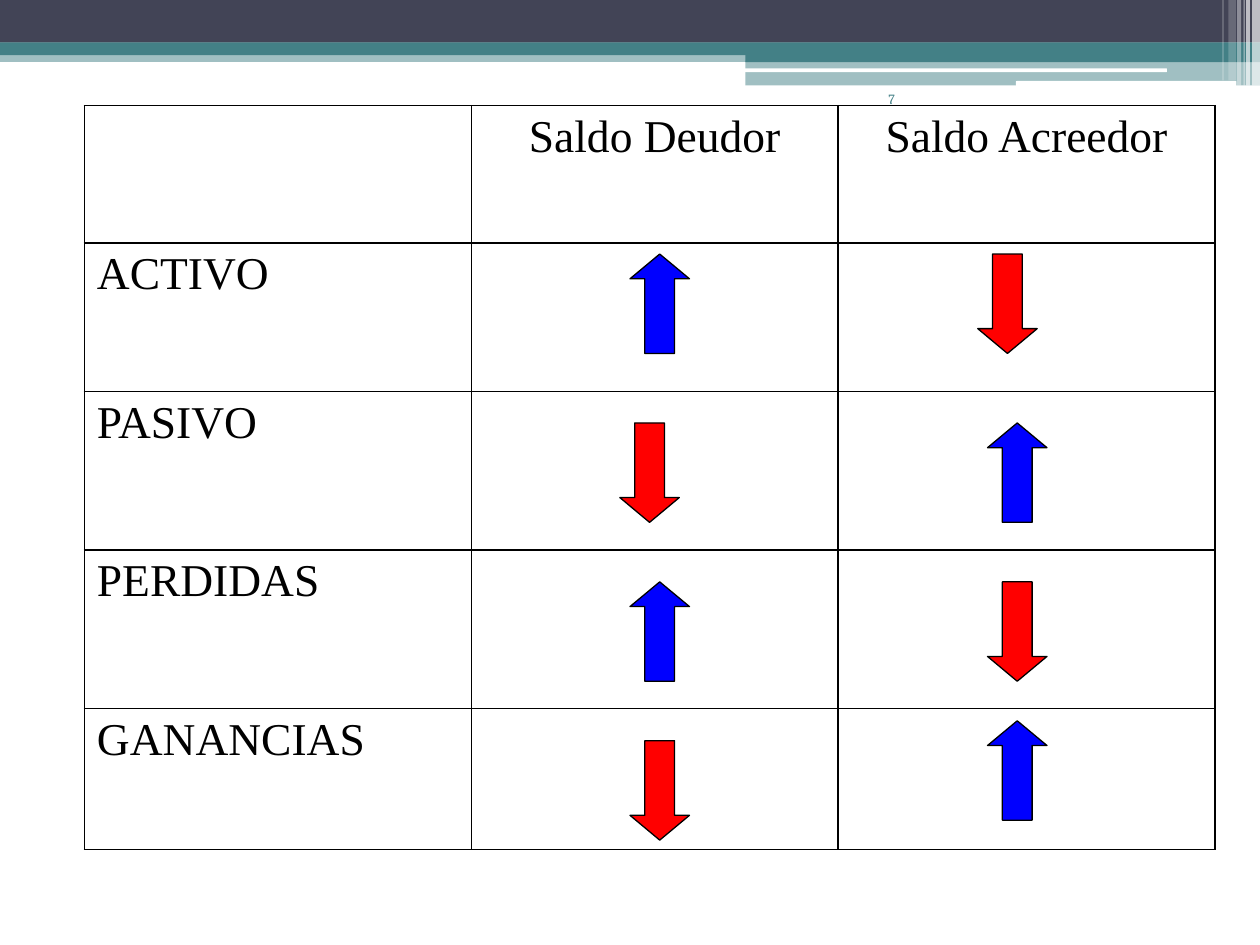
from lxml.etree import SubElement
from pptx import Presentation
from pptx.dml.color import RGBColor
from pptx.enum.shapes import MSO_SHAPE
from pptx.enum.text import PP_ALIGN
from pptx.oxml import parse_xml
from pptx.oxml.ns import nsdecls, qn
from pptx.util import Pt

BLACK = RGBColor(0x00, 0x00, 0x00)
WHITE = RGBColor(0xFF, 0xFF, 0xFF)
NAVY = RGBColor(0x42, 0x44, 0x56)
TEAL = RGBColor(0x43, 0x80, 0x86)
BLUE = RGBColor(0x00, 0x00, 0xFF)
RED = RGBColor(0xFF, 0x00, 0x00)


class SlideBuilder:
    """Draws styled elements on one slide, with lengths in points."""

    table_font = "Times New Roman"
    number_font = "Cambria"

    def __init__(self, slide):
        self.slide = slide

    def shape(self, preset, box, color):
        shape = self.slide.shapes.add_shape(preset, *map(Pt, box))
        shape.shadow.inherit = False
        shape.fill.solid()
        shape.fill.fore_color.rgb = color
        shape.line.fill.background()
        return shape

    def band(self, box, color, opacity=100, preset=MSO_SHAPE.RECTANGLE):
        band = self.shape(preset, box, color)
        if opacity < 100:
            tint = band.fill._xPr.find(qn("a:solidFill"))[0]
            SubElement(tint, qn("a:alpha"), val=str(opacity * 1000))

    def arrow(self, left, top, rises):
        preset = MSO_SHAPE.UP_ARROW if rises else MSO_SHAPE.DOWN_ARROW
        arrow = self.shape(preset, (left, top, 34, 56.8), BLUE if rises else RED)
        arrow.adjustments[1] = 0.417
        arrow.line.color.rgb = BLACK
        arrow.line.width = Pt(0.75)

    def add_text(self, frame, text, size, font, color, align):
        paragraph = frame.paragraphs[0]
        paragraph.alignment = align
        run = paragraph.add_run()
        run.text = text
        run.font.size = Pt(size)
        run.font.name = font
        run.font.color.rgb = color

    def page_number(self, box, text):
        frame = self.slide.shapes.add_textbox(*map(Pt, box)).text_frame
        frame.word_wrap = True
        self.add_text(frame, text, 8, self.number_font, TEAL, PP_ALIGN.RIGHT)

    def border(self, cell):
        properties = cell._tc.get_or_add_tcPr()
        for index, side in enumerate("LRTB"):
            properties.insert(index, parse_xml(
                f'<a:ln{side} {nsdecls("a")} w="12700"><a:solidFill>'
                f'<a:srgbClr val="{BLACK}"/></a:solidFill></a:ln{side}>'))

    def table(self, left, top, widths, heights, rows):
        table = self.slide.shapes.add_table(
            len(heights), len(widths), Pt(left), Pt(top),
            Pt(sum(widths)), Pt(sum(heights))).table
        for column, width in zip(table.columns, widths):
            column.width = Pt(width)
        for row, height, texts in zip(table.rows, heights, rows):
            row.height = Pt(height)
            for index, (cell, text) in enumerate(zip(row.cells, texts)):
                cell.fill.background()
                self.border(cell)
                if text:
                    align = PP_ALIGN.CENTER if index else PP_ALIGN.LEFT
                    self.add_text(cell.text_frame, text, 26, self.table_font, BLACK, align)


def main():
    presentation = Presentation()
    presentation.slide_width, presentation.slide_height = Pt(720), Pt(540)
    builder = SlideBuilder(presentation.slides.add_slide(presentation.slide_layouts[6]))

    builder.band((0, 28.8, 720, 6.6), TEAL, 50)
    builder.band((0, 0, 720, 24.4), NAVY)
    builder.band((0, 24.3, 720, 7.2), TEAL)
    builder.band((426, 28.4, 294, 7.1), TEAL)
    builder.band((426, 34.6, 294, 14.2), TEAL, 50)
    for rule in ((425.6, 39.1, 241.2, 2.2), (580.5, 46.3, 126, 2.9)):
        builder.band(rule, WHITE, preset=MSO_SHAPE.ROUNDED_RECTANGLE)
    stripes = (
        (715.5, 4.5, 49, 65), (712.1, 2.2, 49, 65), (710.6, 0.7, 49, 60),
        (707, 2.2, 49, 40), (702, 4.3, 46, 20), (698.5, 0.7, 46, 30),
    )
    for left, width, height, opacity in stripes:
        builder.band((left, 0, width, height), WHITE, opacity)

    builder.page_number((414, 48.2, 104.4, 36), "7")

    accounts = ("ACTIVO", "PASIVO", "PERDIDAS", "GANANCIAS")
    rows = [("", "Saldo Deudor", "Saldo Acreedor")]
    rows += [(account, "", "") for account in accounts]
    builder.table(48.2, 60.4, (221.2, 209.6, 215.4), (78.4, 84.8, 90.6, 90.6, 80.8), rows)

    balances = (
        ((360, 145.2, True), (558.7, 145.2, False)),
        ((354.2, 241.7, False), (564.3, 241.7, True)),
        ((360, 332.5, True), (564.3, 332.5, False)),
        ((360, 423.3, False), (564.3, 411.9, True)),
    )
    for debit, credit in balances:
        builder.arrow(*debit)
        builder.arrow(*credit)

    presentation.save("out.pptx")


if __name__ == "__main__":
    main()
